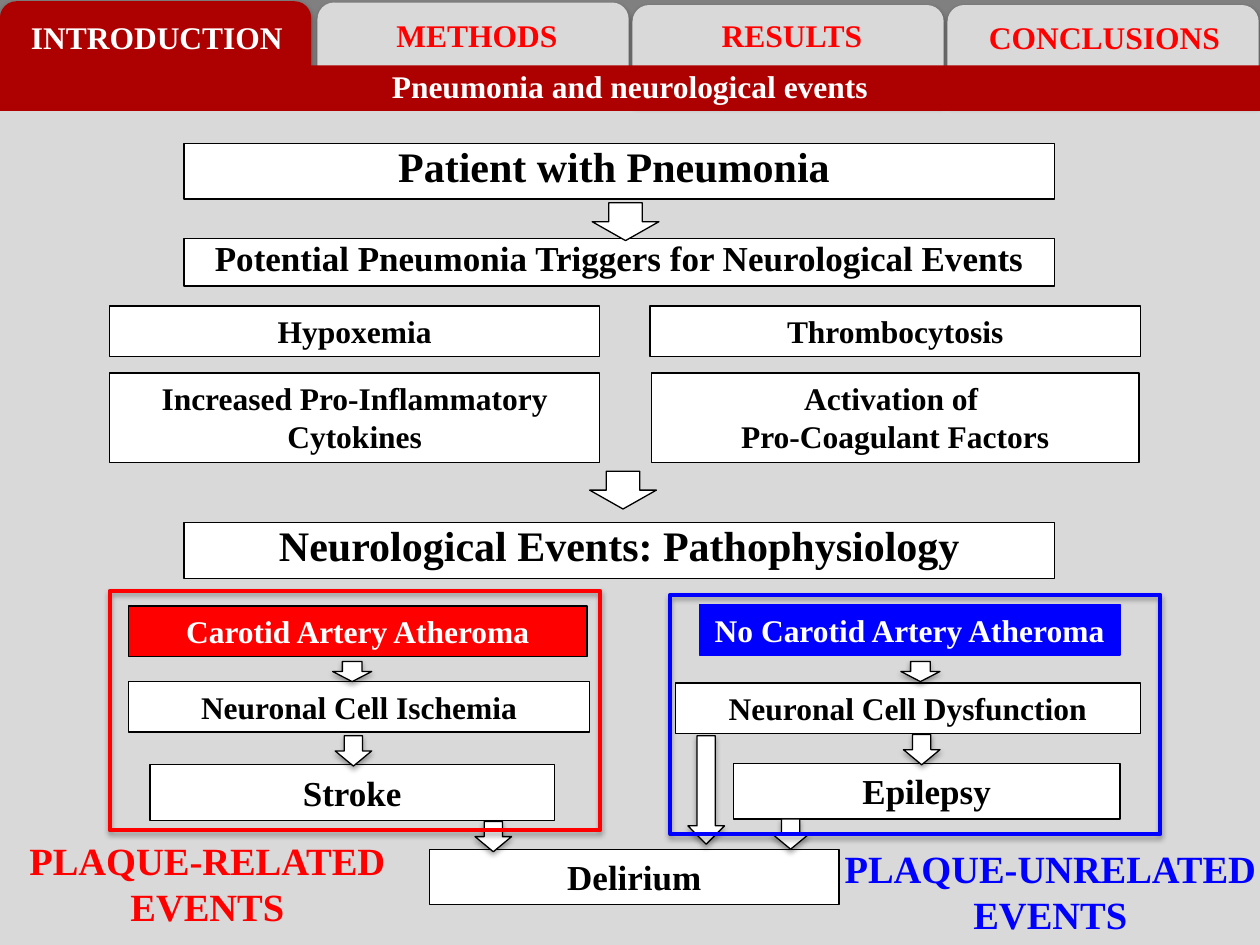
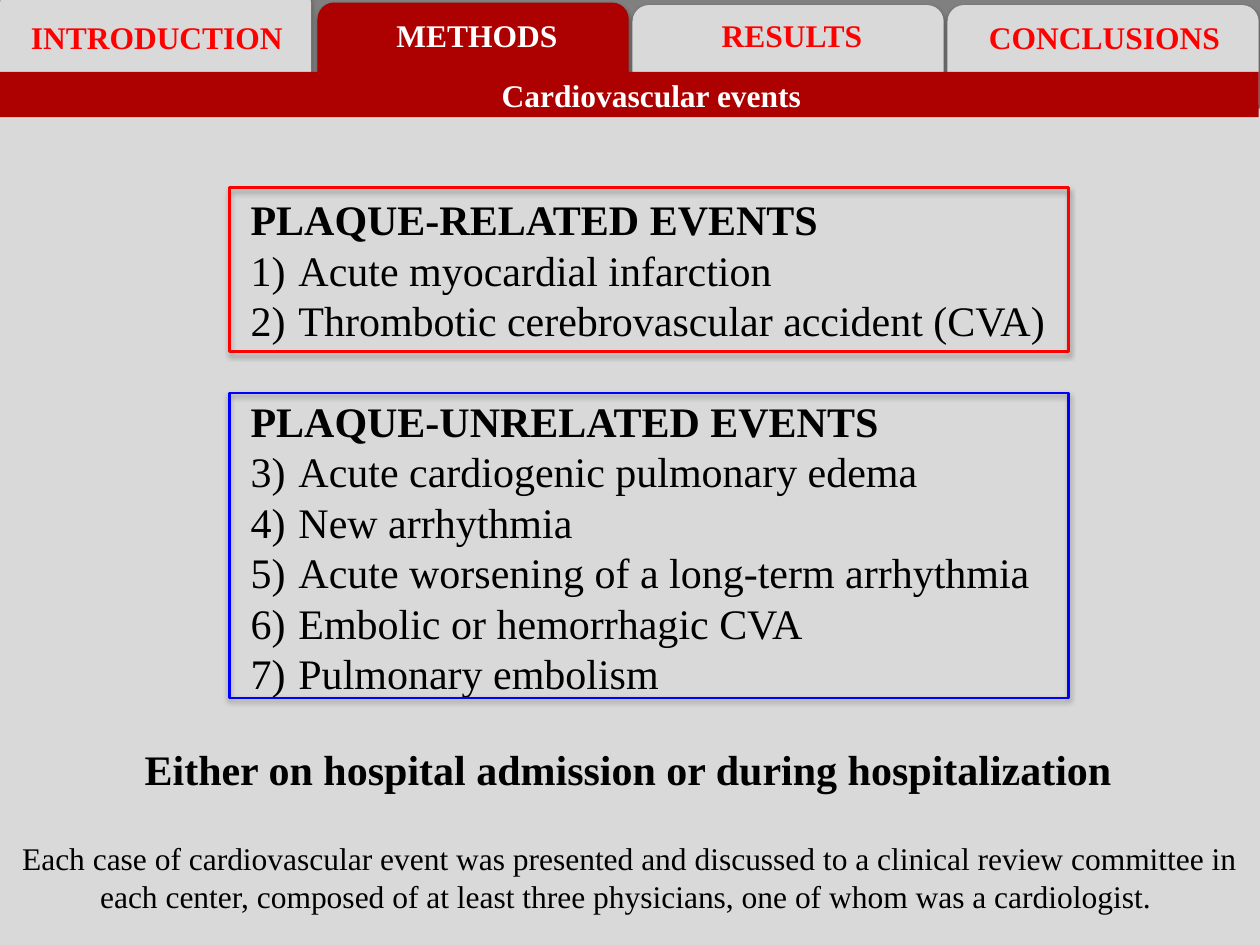
from lxml import etree
from pptx import Presentation
from pptx import util as u
from pptx.dml.color import RGBColor
from pptx.enum import shapes, text
from pptx.oxml import ns

COLORS = {
    "bg": "D9D9D9", "gray": "808080", "band": "AD0000", "white": "FFFFFF",
    "black": "000000", "red": "FF0000", "blue": "0000FF",
}
RGB = {name: RGBColor.from_string(value) for name, value in COLORS.items()}
FONT = "Times New Roman"
RECT = shapes.MSO_SHAPE.RECTANGLE
TAB = shapes.MSO_SHAPE.ROUND_2_SAME_RECTANGLE
ARROW = shapes.MSO_SHAPE.DOWN_ARROW
CENTER, LEFT = text.PP_ALIGN.CENTER, text.PP_ALIGN.LEFT


def add_shape(s, kind, box, fill=None, line=None, width=0.75, shadow=False):
    sp = s.shapes.add_shape(kind, *map(u.Inches, box))
    sp.shadow.inherit = False
    if fill:
        sp.fill.solid()
        sp.fill.fore_color.rgb = RGB[fill]
    else:
        sp.fill.background()
    if line:
        sp.line.color.rgb = RGB[line]
        sp.line.width = u.Pt(width)
    else:
        sp.line.fill.background()
    if shadow:
        effects = sp.element.spPr.find(ns.qn("a:effectLst"))
        outer = etree.SubElement(effects, ns.qn("a:outerShdw"), blurRad="39370",
                                 dist="22860", dir="5400000", rotWithShape="0")
        color = etree.SubElement(outer, ns.qn("a:srgbClr"), val=COLORS["black"])
        etree.SubElement(color, ns.qn("a:alpha"), val="35000")
    return sp


def write(sp, lines, size=18, color="black", bold=True, align=CENTER, spacing=None):
    tf = sp.text_frame
    tf.text = lines
    tf.word_wrap = True
    tf.auto_size = text.MSO_AUTO_SIZE.NONE
    tf.vertical_anchor = text.MSO_ANCHOR.TOP
    for p in tf.paragraphs:
        p.alignment = align
        p.line_spacing = spacing
        p.font.name = FONT
        p.font.size = u.Pt(size)
        p.font.bold = bold
        p.font.color.rgb = RGB[color]
    return tf


prs = Presentation()
prs.slide_width, prs.slide_height = u.Inches(10), u.Inches(7.5)

tabs = [
    ("INTRODUCTION", 0, 0.01, (0.09, 0.09, 2.31, 0.4)),
    ("METHODS", 2.52, 0.02, (2.74, 0.08, 2.09, 0.4)),
    ("RESULTS", 5.02, 0.04, (5.24, 0.08, 2.09, 0.4)),
    ("CONCLUSIONS", 7.52, 0.04, (7.72, 0.09, 2.09, 0.4)),
]
pages = [
    ("Pneumonia and neurological events", "INTRODUCTION", 0.01,
     (0, -0.4, 10.48, 1.24), (0, 0.52, 10.4, 0.36), (0, 0.48, 10, 0.4)),
    ("Cardiovascular events", "METHODS", -0.1,
     (0, -0.38, 10, 1.24), (0, 0.57, 9.99, 0.36), (0.17, 0.55, 10, 0.4)),
]
for heading, active, first_top, backdrop, band, title_box in pages:
    s = prs.slides.add_slide(prs.slide_layouts[5])
    s.background.fill.solid()
    s.background.fill.fore_color.rgb = RGB["bg"]
    add_shape(s, RECT, backdrop, "gray")
    for i, (name, left, top, label_box) in enumerate(tabs):
        add_shape(s, TAB, (left, top if i else first_top, 2.47, 0.79),
                  "band" if name == active else "bg", shadow=True)
    add_shape(s, RECT, band, "band")
    for name, left, top, label_box in tabs:
        label = s.shapes.add_textbox(*map(u.Inches, label_box))
        write(label, name, color="white" if name == active else "red")
    title = s.shapes.title
    title.left, title.top, title.width, title.height = map(u.Inches, title_box)
    write(title, heading, color="white")
    s.shapes.element.append(title.element)

intro, methods = prs.slides

steps = [
    ("Patient with Pneumonia ", (1.46, 1.14, 6.91, 0.44), 24, 0.8),
    ("Potential Pneumonia Triggers for Neurological Events", (1.46, 1.89, 6.91, 0.38), 20, 0.8),
    ("Hypoxemia", (0.87, 2.43, 3.89, 0.4), 18, None),
    ("Thrombocytosis", (5.16, 2.43, 3.89, 0.4), 18, None),
    ("Increased Pro-Inflammatory Cytokines", (0.87, 2.96, 3.89, 0.71), 18, None),
    ("Activation of \nPro-Coagulant Factors", (5.17, 2.96, 3.87, 0.71), 18, None),
    ("Neurological Events: Pathophysiology", (1.46, 4.15, 6.91, 0.44), 24, 0.8),
    ("Neuronal Cell Ischemia", (1.02, 5.41, 3.66, 0.4), 18, None),
    ("Neuronal Cell Dysfunction", (5.36, 5.42, 3.69, 0.4), 18, None),
    ("Stroke", (1.19, 6.07, 3.21, 0.44), 20, None),
    ("Epilepsy", (5.82, 6.06, 3.07, 0.44), 20, None),
    ("Delirium", (3.41, 6.74, 3.25, 0.44), 20, None),
]
for step, box, size, spacing in steps:
    sp = add_shape(intro, RECT, box, "white", "black")
    write(sp, step, size, spacing=spacing)

for left, top in [(4.7, 1.61), (4.68, 3.74)]:
    add_shape(intro, ARROW, (left, top, 0.53, 0.3), "white", "black")

small_arrows = [
    (2.64, 5.25, 0.31, 0.16), (7.15, 5.25, 0.31, 0.16),
    (2.66, 5.84, 0.29, 0.24), (7.17, 5.83, 0.29, 0.24),
    (3.77, 6.52, 0.29, 0.24), (6.13, 6.5, 0.29, 0.24),
    (5.46, 5.84, 0.29, 0.86),
]
for box in small_arrows:
    add_shape(intro, ARROW, box, "white", "black", shadow=True)

branches = [
    ("Carotid Artery Atheroma", (1.02, 4.81, 3.64, 0.4), "red", "black",
     (0.87, 4.69, 3.89, 1.9), "PLAQUE-RELATED EVENTS", (-0.3, 6.59, 3.89, 0.84)),
    ("No Carotid Artery Atheroma", (5.55, 4.8, 3.34, 0.4), "blue", "blue",
     (5.32, 4.72, 3.89, 1.9), "PLAQUE-UNRELATED EVENTS", (6.39, 6.66, 3.89, 0.84)),
]
for cause, cause_box, color, border, frame_box, outcome, outcome_box in branches:
    sp = add_shape(intro, RECT, cause_box, color, border)
    write(sp, cause, color="white")
    add_shape(intro, RECT, frame_box, line=color, width=2.25, shadow=True)
    label = intro.shapes.add_textbox(*map(u.Inches, outcome_box))
    write(label, outcome, 22, color)

event_lists = [
    ("PLAQUE-RELATED EVENTS",
     ["Acute myocardial infarction", "Thrombotic cerebrovascular accident (CVA)"],
     1, 1.49, 1.49, 1.3, "red"),
    ("PLAQUE-UNRELATED EVENTS",
     ["Acute cardiogenic pulmonary edema", "New arrhythmia",
      "Acute worsening of a long-term arrhythmia", "Embolic or hemorrhagic CVA",
      "Pulmonary embolism"],
     3, 3.09, 3.12, 2.42, "blue"),
]
for heading, events, start, text_top, frame_top, height, color in event_lists:
    label = methods.shapes.add_textbox(*map(u.Inches, (1.89, text_top, 7.31, height)))
    tf = write(label, "\n".join([heading, *events]), 24, bold=False, align=LEFT)
    tf.paragraphs[0].font.bold = True
    for p in tf.paragraphs[1:]:
        pPr = p._p.get_or_add_pPr()
        pPr.set("marL", str(u.Inches(0.38)))
        pPr.set("indent", str(-u.Inches(0.38)))
        number = etree.Element(ns.qn("a:buAutoNum"), type="arabicParenR", startAt=str(start))
        pPr.insert(0, number)
    add_shape(methods, RECT, (1.82, frame_top, 6.66, height), line=color, width=1.5, shadow=True)

notes = [
    ("Either on hospital admission or during hospitalization", (-0.01, 5.85, 9.99, 0.91), 24, True),
    ("Each case of cardiovascular event was presented and discussed to a clinical review "
     "committee in each center, composed of at least three physicians, one of whom was a "
     "cardiologist. ", (0, 6.61, 10, 0.71), 18, False),
]
for note, box, size, bold in notes:
    label = methods.shapes.add_textbox(*map(u.Inches, box))
    write(label, note, size, bold=bold)

prs.save("out.pptx")
